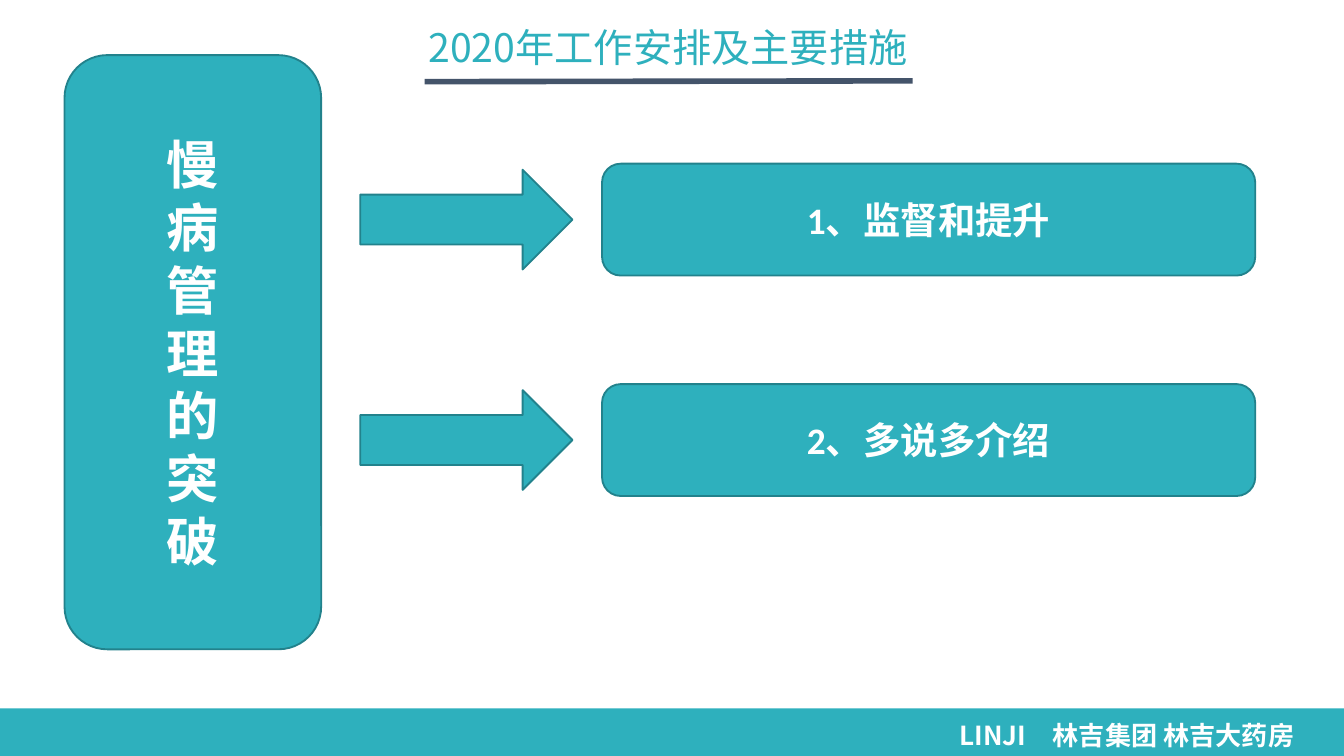
from dataclasses import dataclass

from lxml import etree
from pptx import Presentation
from pptx.dml.color import RGBColor
from pptx.enum.shapes import MSO_CONNECTOR, MSO_SHAPE
from pptx.enum.text import MSO_ANCHOR, PP_ALIGN
from pptx.oxml.ns import qn
from pptx.util import Inches, Pt

RECTANGLE = MSO_SHAPE.RECTANGLE
ROUNDED = MSO_SHAPE.FLOWCHART_ALTERNATE_PROCESS
RIGHT_ARROW = MSO_SHAPE.RIGHT_ARROW
STRAIGHT = MSO_CONNECTOR.STRAIGHT
MIDDLE = MSO_ANCHOR.MIDDLE
TOP = MSO_ANCHOR.TOP
CENTER = PP_ALIGN.CENTER
LEFT = PP_ALIGN.LEFT

PAGE_WIDTH = Inches(10)
PAGE_HEIGHT = PAGE_WIDTH * 9 // 16


@dataclass(frozen=True)
class Theme:
    teal: RGBColor = RGBColor.from_string("2EB0BD")
    outline: RGBColor = RGBColor.from_string("22828C")
    slate: RGBColor = RGBColor.from_string("44546A")
    white: RGBColor = RGBColor.from_string("FFFFFF")
    latin_font: str = "Calibri"
    chinese_font: str = "Noto Sans CJK SC"
    topic_size: int = 28
    title_size: int = 21
    measure_size: int = 20
    footer_size: int = 14


@dataclass(frozen=True)
class Area:
    """A place on the page, in percent of its width and height."""
    left: float
    top: float
    width: float
    height: float

    def lengths(self) -> tuple:
        return (across(self.left), down(self.top), across(self.width), down(self.height))


@dataclass(frozen=True)
class TextStyle:
    size: int
    color: RGBColor
    font: str
    bold: bool = True
    align: PP_ALIGN = CENTER


THEME = Theme()
TOPIC_STYLE = TextStyle(THEME.topic_size, THEME.white, THEME.latin_font)
MEASURE_STYLE = TextStyle(THEME.measure_size, THEME.white, THEME.latin_font)
TITLE_STYLE = TextStyle(THEME.title_size, THEME.teal, THEME.chinese_font, bold=False)
FOOTER_STYLE = TextStyle(THEME.footer_size, THEME.white, THEME.chinese_font, align=LEFT)

TITLE = "2020年工作安排及主要措施"
TOPIC = "慢病管理的突破"
MEASURES = ("1、监督和提升", "2、多说多介绍")
FOOTER = "LINJI　林吉集团 林吉大药房"

FIRST_CENTER = 29.05
ROW_PITCH = 29.16
ARROW_HEIGHT = 13.2
CARD_HEIGHT = 14.8


def across(percent: float) -> int:
    return int(PAGE_WIDTH * percent / 100)


def down(percent: float) -> int:
    return int(PAGE_HEIGHT * percent / 100)


def write(frame, text: str, style: TextStyle, anchor: MSO_ANCHOR = MIDDLE) -> None:
    frame.text = text
    frame.word_wrap = True
    frame.vertical_anchor = anchor
    for para in frame.paragraphs:
        para.alignment = style.align
        for span in para.runs:
            span.font.size = Pt(style.size)
            span.font.bold = style.bold
            span.font.name = style.font
            span.font.color.rgb = style.color
            east_asian = etree.SubElement(span.font._element, qn("a:ea"))
            east_asian.set("typeface", THEME.chinese_font)


def add_block(page, kind: MSO_SHAPE, area: Area, outlined: bool = True):
    block = page.shapes.add_shape(kind, *area.lengths())
    block.shadow.inherit = False
    block.fill.solid()
    block.fill.fore_color.rgb = THEME.teal
    if outlined:
        block.line.color.rgb = THEME.outline
        block.line.width = Pt(1)
    else:
        block.line.fill.background()
    return block


def add_title(page) -> None:
    box = page.shapes.add_textbox(*Area(16.9, 2.1, 65.6, 8.9).lengths())
    frame = box.text_frame
    frame.margin_left = frame.margin_right = 0
    write(frame, TITLE, TITLE_STYLE)
    frame.paragraphs[0].line_spacing = 0.9

    underline = page.shapes.add_connector(
        STRAIGHT, across(31.6), down(10.8), across(67.9), down(10.7))
    underline.line.color.rgb = THEME.slate
    underline.line.width = Pt(3)
    etree.SubElement(underline._element.spPr, qn("a:effectLst"))


def add_measure(page, row: int, text: str) -> None:
    """Draw one arrow and the card it points to, on a shared centre line."""
    center = FIRST_CENTER + row * ROW_PITCH
    add_block(page, RIGHT_ARROW, Area(26.8, center - ARROW_HEIGHT / 2, 15.8, ARROW_HEIGHT))
    card = add_block(page, ROUNDED, Area(44.8, center - CARD_HEIGHT / 2, 48.6, CARD_HEIGHT))
    write(card.text_frame, text, MEASURE_STYLE)


def add_footer(page) -> None:
    add_block(page, RECTANGLE, Area(0, 93.7, 100, 6.5), outlined=False)
    box = page.shapes.add_textbox(*Area(70.7, 94.4, 30.1, 5.5).lengths())
    frame = box.text_frame
    frame.margin_left = frame.margin_right = Inches(0.07)
    frame.margin_top = frame.margin_bottom = Inches(0.04)
    write(frame, FOOTER, FOOTER_STYLE, TOP)


def main() -> None:
    deck = Presentation()
    deck.slide_width = PAGE_WIDTH
    deck.slide_height = PAGE_HEIGHT
    page = deck.slides.add_slide(deck.slide_layouts[6])

    add_footer(page)
    add_title(page)
    topic = add_block(page, ROUNDED, Area(4.8, 7.3, 19.1, 78.6))
    write(topic.text_frame, "\n".join(TOPIC), TOPIC_STYLE)
    for row, text in enumerate(MEASURES):
        add_measure(page, row, text)

    deck.save("out.pptx")


if __name__ == "__main__":
    main()
